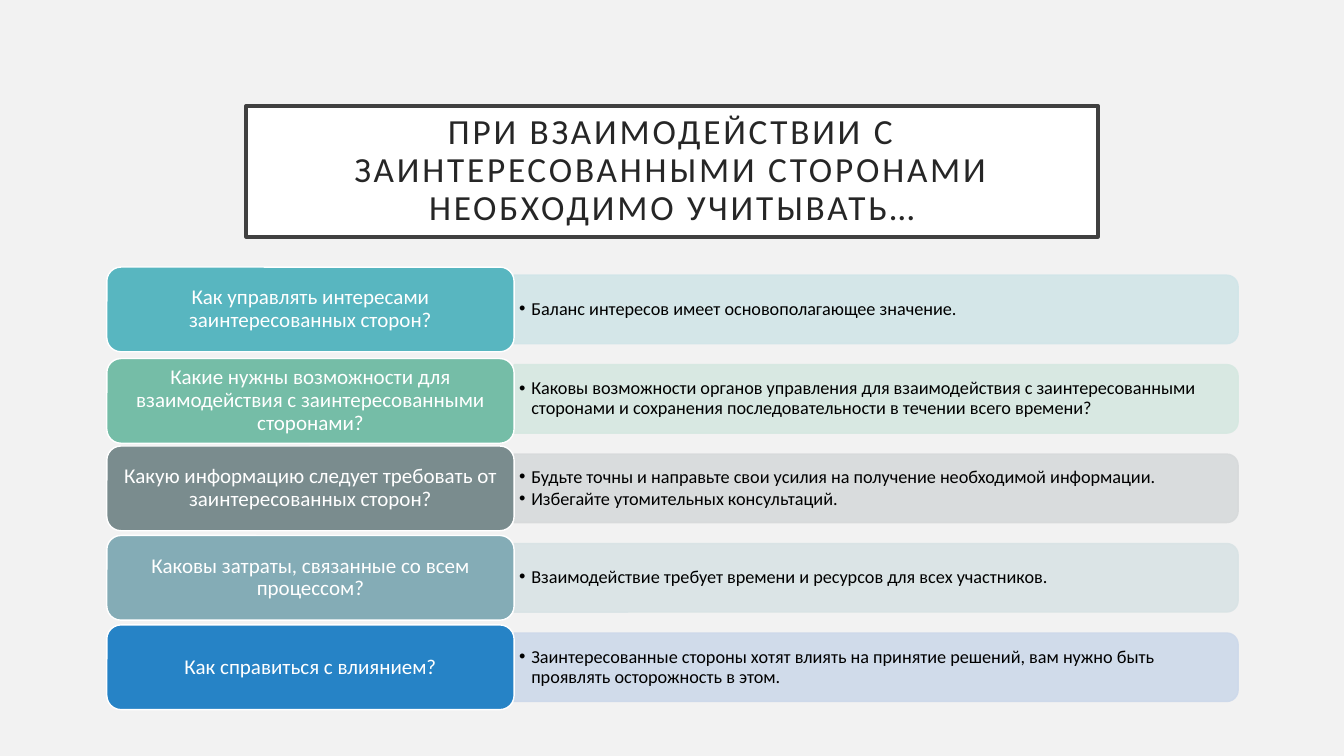
from lxml.etree import SubElement
from pptx import Presentation
from pptx.dml.color import RGBColor
from pptx.enum.shapes import MSO_SHAPE
from pptx.enum.text import MSO_ANCHOR, PP_ALIGN
from pptx.oxml.ns import qn
from pptx.util import Inches, Pt

FONT = "Calibri"
COLORS = {
    "background": "F2F2F2", "white": "FFFFFF", "frame": "404040",
    "title": "262626", "body": "000000",
    "cyan": "58B6C0", "cyan_pale": "D1E5E8",
    "green": "75BDA7", "green_pale": "D6E8E1",
    "gray": "7A8C8E", "gray_pale": "D7DADB",
    "steel": "84ACB6", "steel_pale": "D9E3E5",
    "blue": "2683C6", "blue_pale": "CDD9EA",
}
TITLE = "ПРИ ВЗАИМОДЕЙСТВИИ С ЗАИНТЕРЕСОВАННЫМИ СТОРОНАМИ НЕОБХОДИМО УЧИТЫВАТЬ…"
# Colour, question, answers, vertical shift of the label
ROWS = [
    ("cyan", "Как управлять интересами заинтересованных сторон?",
     ["Баланс интересов имеет основополагающее значение."], 0),
    ("green", "Какие нужны возможности для взаимодействия с заинтересованными сторонами?",
     ["Каковы возможности органов управления для взаимодействия с заинтересованными "
      "сторонами и сохранения последовательности в течении всего времени?"], 0.02),
    ("gray", "Какую информацию следует требовать от заинтересованных сторон?",
     ["Будьте точны и направьте свои усилия на получение необходимой информации.",
      "Избегайте утомительных консультаций."], 0),
    ("steel", "Каковы затраты, связанные со всем процессом?",
     ["Взаимодействие требует времени и ресурсов для всех участников."], 0),
    ("blue", "Как справиться с влиянием?",
     ["Заинтересованные стороны хотят влиять на принятие решений, вам нужно быть "
      "проявлять осторожность в этом."], 0),
]
LABEL_SHARE = 0.36   # label width as a share of the row
PANEL_SHARE = 0.81   # panel height as a share of the label height


def rgb(name):
    return RGBColor.from_string(COLORS[name])


def add_box(slide, kind, box, fill, line, width=1, alpha=None):
    sp = slide.shapes.add_shape(kind, *map(Inches, box))
    sp.shadow.inherit = False
    sp.fill.solid()
    sp.fill.fore_color.rgb = rgb(fill)
    sp.line.color.rgb = rgb(line)
    sp.line.width = Pt(width)
    if alpha:
        for color in sp._element.spPr.iter(qn("a:srgbClr")):
            SubElement(color, qn("a:alpha"), val=str(alpha * 1000))
    return sp


def write(sp, texts, size, color, inset, align=PP_ALIGN.CENTER, bullet=False, spacing=0):
    tf = sp.text_frame
    tf.word_wrap = True
    tf.vertical_anchor = MSO_ANCHOR.MIDDLE
    tf.margin_left = tf.margin_right = Inches(inset[0])
    tf.margin_top = tf.margin_bottom = Inches(inset[1])
    for i, text in enumerate(texts):
        p = tf.paragraphs[0] if i == 0 else tf.add_paragraph()
        p.alignment = align
        p.line_spacing = 0.9
        r = p.add_run()
        r.text = text
        r.font.name = FONT
        r.font.size = Pt(size)
        r.font.color.rgb = rgb(color)
        if spacing:
            r.font._element.set("spc", str(spacing * 100))
        if bullet:
            p.space_after = Pt(2)
            pPr = p._p.get_or_add_pPr()
            pPr.set("marL", str(Inches(0.12)))
            pPr.set("indent", str(-Inches(0.12)))
            SubElement(pPr, qn("a:buFont"), typeface="Arial")
            SubElement(pPr, qn("a:buChar"), char="•")


def add_title(slide, box):
    sp = add_box(slide, MSO_SHAPE.RECTANGLE, box, "white", "frame", 2.5)
    write(sp, [TITLE], 25.2, "title", (0.2, 0.2), spacing=2)


def add_row(slide, box, color, question, answers, shift):
    x, y, w, h = box
    label_w = w * LABEL_SHARE
    panel_x, panel_w, panel_h = x + label_w, w - label_w, h * PANEL_SHARE
    middle = y + h / 2

    # Answer panel: an upright shape turned so its round corners face right
    upright = (panel_x + (panel_w - panel_h) / 2, middle - panel_w / 2, panel_h, panel_w)
    pale = color + "_pale"
    panel = add_box(slide, MSO_SHAPE.ROUND_2_SAME_RECTANGLE, upright, pale, pale, alpha=90)
    panel.rotation = 90

    # Answer text
    text_h = panel_h - 0.07
    tb = slide.shapes.add_textbox(*map(Inches, (panel_x, middle - text_h / 2,
                                                panel_w - 0.03, text_h)))
    write(tb, answers, 13, "body", (0.05, 0.03), PP_ALIGN.LEFT, bullet=True)

    # Question label
    label = add_box(slide, MSO_SHAPE.ROUNDED_RECTANGLE, (x, y + shift, label_w, h),
                    color, "white")
    write(label, [question], 15, "white", (0.06, 0.03))


def add_question_list(slide, box):
    x, y, w, h = box
    row_h = 0.84
    pitch = (h - row_h) / (len(ROWS) - 1)
    for i, row in enumerate(ROWS):
        add_row(slide, (x, y + i * pitch, w, row_h), *row)


def main():
    prs = Presentation()
    prs.slide_width, prs.slide_height = Inches(13.33), Inches(7.5)
    slide = prs.slides.add_slide(prs.slide_layouts[6])
    slide.background.fill.solid()
    slide.background.fill.fore_color.rgb = rgb("background")
    add_title(slide, (2.44, 1.05, 8.45, 1.3))
    add_question_list(slide, (1.06, 2.65, 11.22, 4.39))
    prs.save("out.pptx")


if __name__ == "__main__":
    main()
